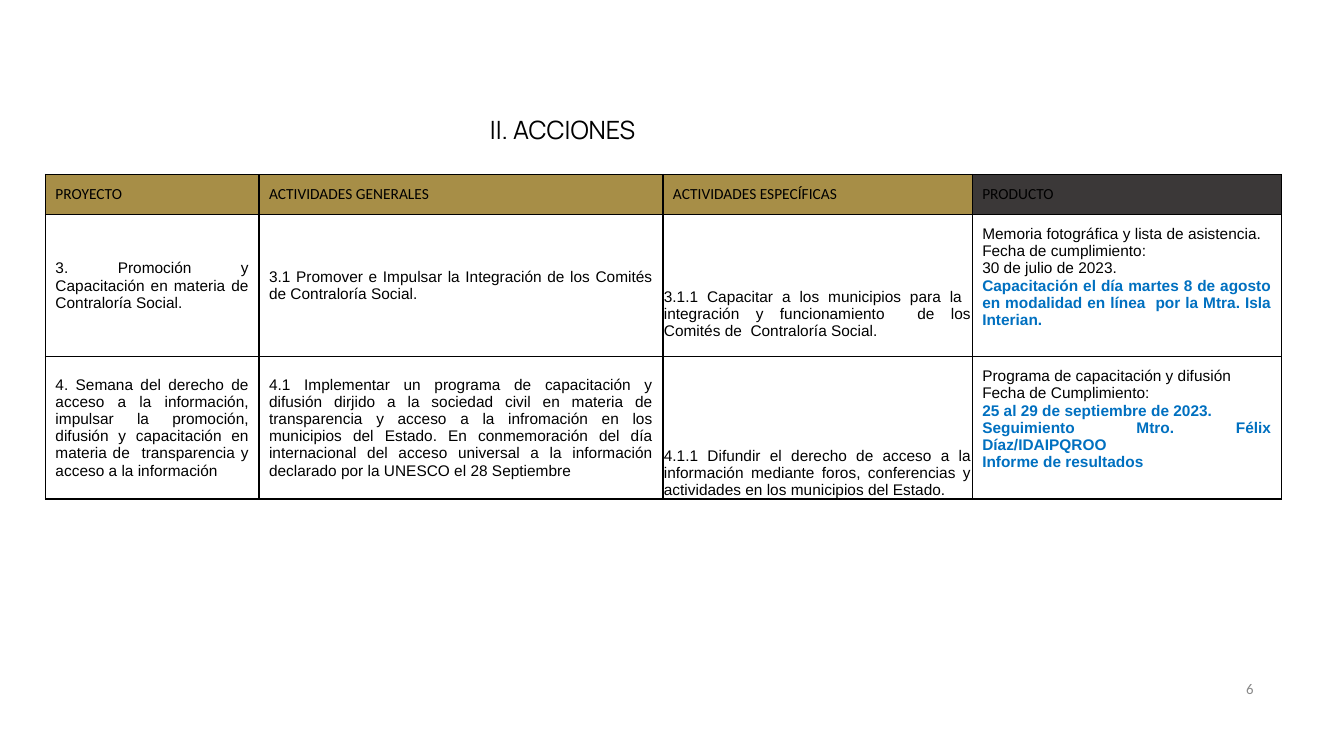
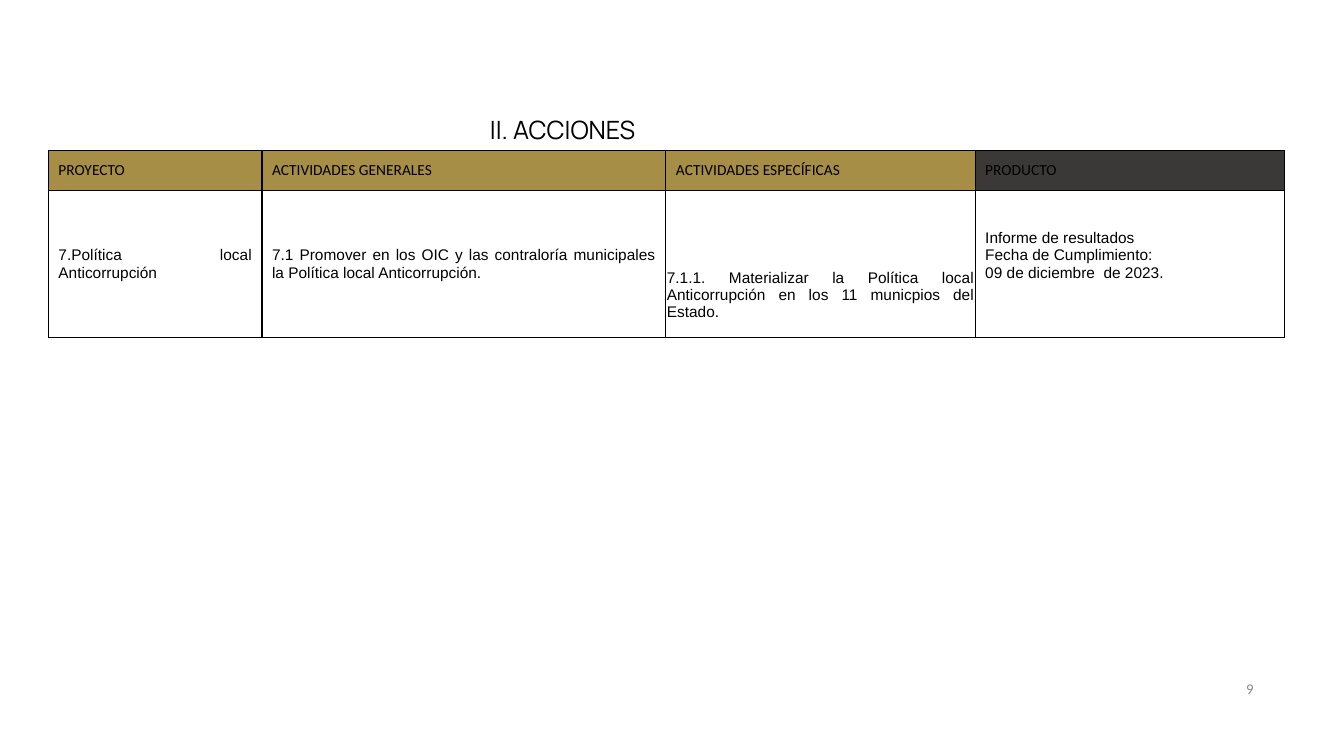
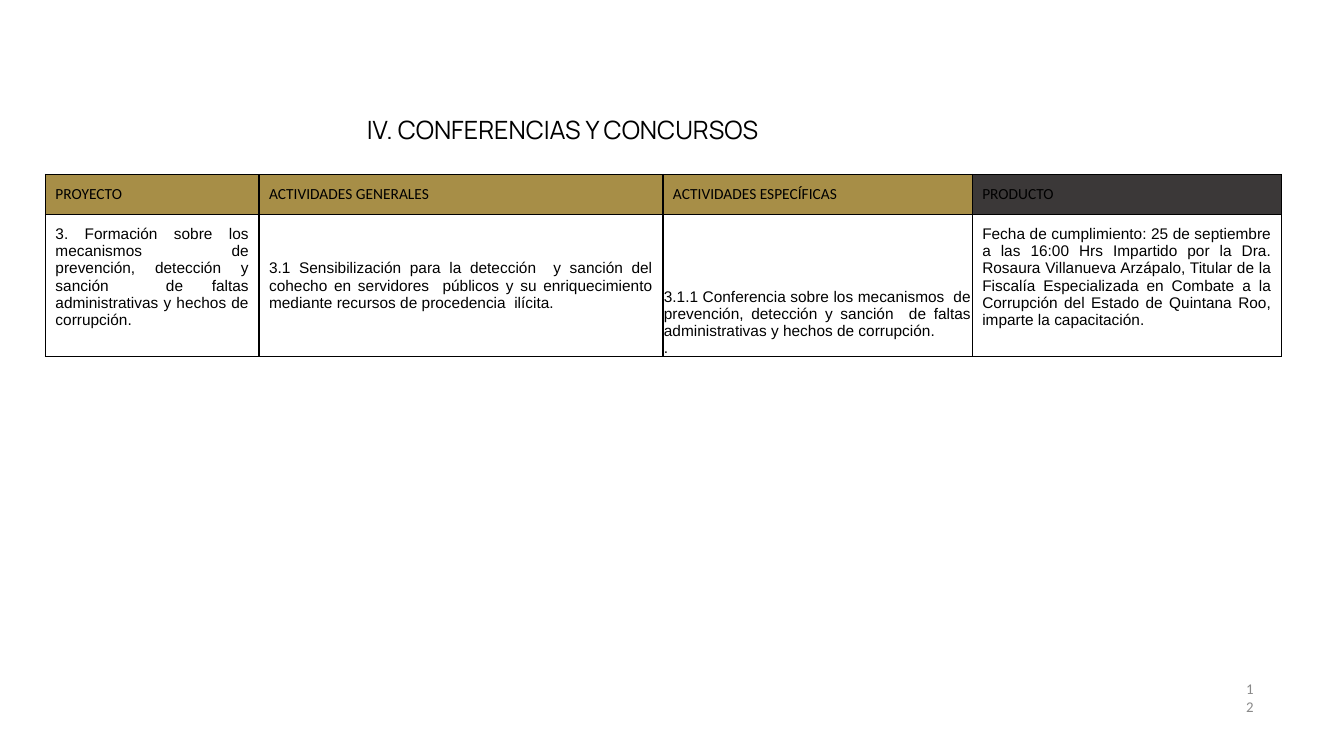
from dataclasses import dataclass
from lxml import etree
from pptx import Presentation
from pptx.dml.color import RGBColor
from pptx.enum.text import MSO_ANCHOR, MSO_AUTO_SIZE, PP_ALIGN
from pptx.oxml.ns import qn
from pptx.util import Emu, Inches, Pt

MIDDLE, BOTTOM = MSO_ANCHOR.MIDDLE, MSO_ANCHOR.BOTTOM
CENTER, JUSTIFY = PP_ALIGN.CENTER, PP_ALIGN.JUSTIFY
GROW = MSO_AUTO_SIZE.SHAPE_TO_FIT_TEXT
WIDTH, HEIGHT = Inches(13.33), Inches(7.5)
TITLE_ONLY = 5


@dataclass(frozen=True)
class Theme:
    """Colours, fonts and type sizes of the deck."""
    ink: str = "000000"
    gold: str = "A78E47"
    charcoal: str = "3B3838"
    accent: str = "0070C0"
    muted: str = "898989"
    title_font: str = "Manrope"
    label_font: str = "Calibri"
    body_font: str = "Arial"
    title_size: float = 18
    cell_size: float = 11
    number_size: float = 10.6
    border: float = 1


@dataclass(frozen=True)
class Box:
    """An area of the slide, in percent of its width and height."""
    left: float
    top: float
    width: float
    height: float

    def place(self):
        """Return left, top, width and height as lengths."""
        return (Emu(int(WIDTH * self.left / 100)), Emu(int(HEIGHT * self.top / 100)),
                Emu(int(WIDTH * self.width / 100)), Emu(int(HEIGHT * self.height / 100)))


@dataclass(frozen=True)
class Entry:
    """Paragraphs of a cell, those in the accent style, and the room below."""
    lines: tuple
    strong: tuple = ()
    room: float = 0


THEME = Theme()
TITLE_BOX = Box(10.65, 14.93, 62.42, 4.27)
NUMBER_BOX = Box(92.42, 89.87, 1.13, 9.6)
HEADER_SHARE, BODY_SHARE, TALL_SHARE = 5.33, 18.8, 19.47
COLUMN_WEIGHTS = (2.12, 4.01, 3.07, 3.07)
HEADERS = ("PROYECTO", "ACTIVIDADES GENERALES", "ACTIVIDADES ESPECÍFICAS", "PRODUCTO")
SPECIFIC, PRODUCT = 2, 3
LINE_ROOM = 0.17

PAGES = (
    ("II. ACCIONES", "6", (3.38, 23.07), BODY_SHARE, (
        (Entry(("3. Promoción y Capacitación en materia de Contraloría Social.",)),
         Entry(("3.1 Promover e Impulsar la Integración de los Comités de Contraloría Social.",)),
         Entry(("3.1.1 Capacitar a los municipios para la  integración y funcionamiento  de los "
                "Comités de  Contraloría Social.",), room=LINE_ROOM),
         Entry(("Memoria fotográfica y lista de asistencia.", "Fecha de cumplimiento:",
                "30 de julio de 2023."),
               ("Capacitación el día martes 8 de agosto en modalidad en línea  por la Mtra. "
                "Isla Interian.",), LINE_ROOM)),
        (Entry(("4. Semana del derecho de acceso a la información, impulsar la promoción, difusión "
                "y capacitación en materia de  transparencia y acceso a la información",)),
         Entry(("4.1 Implementar un programa de capacitación y difusión dirjido a la sociedad civil "
                "en materia de transparencia y acceso a la infromación en los municipios del "
                "Estado. En conmemoración del día internacional del acceso universal a la "
                "información declarado por la UNESCO el 28 Septiembre",)),
         Entry(("4.1.1 Difundir el derecho de acceso a la información mediante foros, conferencias "
                "y actividades en los municipios del Estado.",)),
         Entry(("Programa de capacitación y difusión", "Fecha de Cumplimiento:"),
               ("25 al 29 de septiembre de 2023.", "Seguimiento Mtro. Félix Díaz/IDAIPQROO",
                "Informe de resultados"), LINE_ROOM)),
    )),
    ("II. ACCIONES", "9", (3.6, 19.87), TALL_SHARE, (
        (Entry(("7.Política local Anticorrupción",)),
         Entry(("7.1 Promover en los OIC y las contraloría municipales la Política local "
                "Anticorrupción.",)),
         Entry(("7.1.1. Materializar la Política local Anticorrupción en los 11 municpios del "
                "Estado.",), room=LINE_ROOM),
         Entry(("Informe de resultados", "Fecha de Cumplimiento:", "09 de diciembre  de 2023."),
               room=LINE_ROOM)),
    )),
    ("IV. CONFERENCIAS Y CONCURSOS", "12", (3.38, 23.07), BODY_SHARE, (
        (Entry(("3. Formación sobre los mecanismos  de prevención, detección y sanción  de faltas "
                "administrativas y hechos de corrupción.",), room=LINE_ROOM),
         Entry(("3.1 Sensibilización para la detección  y sanción del cohecho en servidores  "
                "públicos y su enriquecimiento mediante recursos de procedencia  ilícita.",)),
         Entry(("3.1.1 Conferencia sobre los mecanismos  de prevención, detección y sanción  de "
                "faltas administrativas y hechos de corrupción.", ".")),
         Entry(("Fecha de cumplimiento: 25 de septiembre a las 16:00 Hrs Impartido por la Dra. "
                "Rosaura Villanueva Arzápalo, Titular de la Fiscalía Especializada en Combate a la "
                "Corrupción del Estado de Quintana Roo, imparte la capacitación.",),
               room=LINE_ROOM)),
    )),
)


def style(para, font_name, size, color, bold=False):
    """Set the font of a paragraph."""
    font = para.font
    font.name, font.size, font.bold = font_name, Pt(size), bold
    font.color.rgb = RGBColor.from_string(color)


def set_margins(area, left, top, right, bottom):
    """Set the inner margins of a cell or text frame, in inches."""
    area.margin_left, area.margin_top = Inches(left), Inches(top)
    area.margin_right, area.margin_bottom = Inches(right), Inches(bottom)


def draw_borders(cell):
    """Draw a thin line on the four sides of a cell."""
    properties = cell._tc.get_or_add_tcPr()
    for index, side in enumerate(("a:lnL", "a:lnR", "a:lnT", "a:lnB")):
        line = etree.Element(qn(side), w=str(Pt(THEME.border)))
        fill = etree.SubElement(line, qn("a:solidFill"))
        etree.SubElement(fill, qn("a:srgbClr"), val=THEME.ink)
        properties.insert(index, line)


def fill_cell(cell, entry, font_name, fill=None, low=False):
    """Write an entry in a cell, at the middle or low on its edge."""
    if fill:
        cell.fill.solid()
        cell.fill.fore_color.rgb = RGBColor.from_string(fill)
    else:
        cell.fill.background()
    draw_borders(cell)
    cell.vertical_anchor = BOTTOM if low else MIDDLE
    if low:
        set_margins(cell, 0.01, 0.01, 0.01, entry.room)
    else:
        set_margins(cell, 0.1, 0.05, 0.1, 0.05 + entry.room)
    texts = entry.lines + entry.strong
    cell.text_frame.text = "\n".join(texts)
    for index, para in enumerate(cell.text_frame.paragraphs):
        strong = index >= len(entry.lines)
        para.alignment = JUSTIFY
        style(para, font_name, THEME.cell_size, THEME.accent if strong else THEME.ink, strong)


def add_title(page, box, text):
    """Place the title of a page."""
    title = page.shapes.title
    title.left, title.top, title.width, title.height = box.place()
    frame = title.text_frame
    frame.text = text
    frame.word_wrap, frame.auto_size, frame.vertical_anchor = True, GROW, MIDDLE
    set_margins(frame, 0, 0.01, 0, 0)
    para = frame.paragraphs[0]
    para.alignment = CENTER
    style(para, THEME.title_font, THEME.title_size, THEME.ink)


def add_number(page, box, text):
    """Place the page number."""
    frame = page.shapes.add_textbox(*box.place()).text_frame
    frame.text = text
    frame.word_wrap, frame.auto_size = True, GROW
    set_margins(frame, 0.04, 0, 0, 0)
    style(frame.paragraphs[0], THEME.label_font, THEME.number_size, THEME.muted)


def add_actions(page, box, row_share, rows):
    """Place the table of projects, activities and products."""
    left, top, width, height = box.place()
    table = page.shapes.add_table(len(rows) + 1, len(HEADERS), left, top, width, height).table
    table.first_row = table.horz_banding = False
    for column, weight in zip(table.columns, COLUMN_WEIGHTS):
        column.width = Emu(int(width * weight / sum(COLUMN_WEIGHTS)))
    for index, row in enumerate(table.rows):
        row.height = Emu(int(HEIGHT * (row_share if index else HEADER_SHARE) / 100))
    for index, header in enumerate(HEADERS):
        fill = THEME.charcoal if index == PRODUCT else THEME.gold
        fill_cell(table.cell(0, index), Entry((header,)), THEME.label_font, fill)
    for row_index, entries in enumerate(rows, 1):
        for index, entry in enumerate(entries):
            fill_cell(table.cell(row_index, index), entry, THEME.body_font, low=index == SPECIFIC)


def add_page(deck, title, number, corner, row_share, rows):
    """Add one page of the action plan."""
    page = deck.slides.add_slide(deck.slide_layouts[TITLE_ONLY])
    add_title(page, TITLE_BOX, title)
    add_number(page, NUMBER_BOX, number)
    table_box = Box(*corner, 91.97, HEADER_SHARE + row_share * len(rows))
    add_actions(page, table_box, row_share, rows)


def main():
    """Build and save the deck."""
    deck = Presentation()
    deck.slide_width, deck.slide_height = WIDTH, HEIGHT
    for content in PAGES:
        add_page(deck, *content)
    deck.save("out.pptx")


if __name__ == "__main__":
    main()
